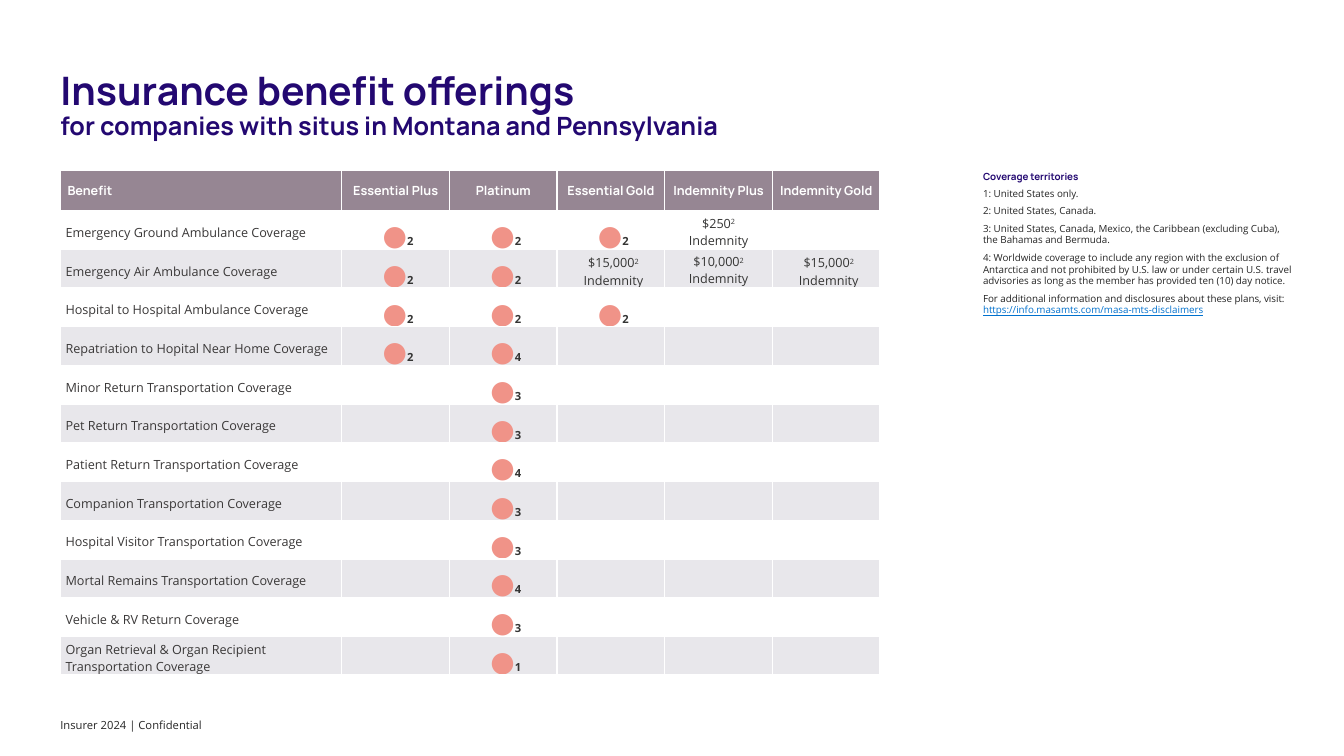
import pptx
import pptx.util
import pptx.dml.color
import pptx.enum.text

Inches = pptx.util.Inches
Pt = pptx.util.Pt
CENTER = pptx.enum.text.PP_ALIGN.CENTER
MIDDLE = pptx.enum.text.MSO_ANCHOR.MIDDLE

HEADING = "Manrope"
BODY = "Open Sans"
COLORS = {
    "navy": "230871", "text": "262626", "label": "3A3838", "mark": "343433",
    "dot": "F09388", "header": "968693", "band": "E8E7EB", "white": "FFFFFF",
    "info": "222222", "address": "0071CE",
}
PLANS = ["Essential Plus", "Platinum", "Essential Gold", "Indemnity Plus", "Indemnity Gold"]
# One entry per plan: a territory number, an indemnity amount, or "" for none.
BENEFITS = [
    ("Emergency Ground Ambulance Coverage", ["2", "2", "2", "$250", ""]),
    ("Emergency Air Ambulance Coverage", ["2", "2", "$15,000", "$10,000", "$15,000"]),
    ("Hospital to Hospital Ambulance Coverage", ["2", "2", "2", "", ""]),
    ("Repatriation to Hopital Near Home Coverage", ["2", "4", "", "", ""]),
    ("Minor Return Transportation Coverage", ["", "3", "", "", ""]),
    ("Pet Return Transportation Coverage", ["", "3", "", "", ""]),
    ("Patient Return Transportation Coverage", ["", "4", "", "", ""]),
    ("Companion Transportation Coverage", ["", "3", "", "", ""]),
    ("Hospital Visitor Transportation Coverage", ["", "3", "", "", ""]),
    ("Mortal Remains Transportation Coverage", ["", "4", "", "", ""]),
    ("Vehicle & RV Return Coverage", ["", "3", "", "", ""]),
    ("Organ Retrieval & Organ Recipient Transportation Coverage", ["", "1", "", "", ""]),
]
TERRITORIES = [
    "1: United States only.",
    "2: United States, Canada.",
    "3: United States, Canada, Mexico, the Caribbean (excluding Cuba), the Bahamas and Bermuda.",
    "4: Worldwide coverage to include any region with the exclusion of Antarctica and not "
    "prohibited by U.S. law or under certain U.S. travel advisories as long as the member "
    "has provided ten (10) day notice.",
]


def rgb(name):
    return pptx.dml.color.RGBColor.from_string(COLORS[name])


def add_span(para, text, size, color, font=BODY, bold=False):
    span = para.add_run()
    span.text = text
    span.font.size = Pt(size)
    span.font.name = font
    span.font.bold = bold
    span.font.color.rgb = rgb(color)
    return span


def set_margins(target, left, top, right, bottom):
    target.margin_left, target.margin_top = Inches(left), Inches(top)
    target.margin_right, target.margin_bottom = Inches(right), Inches(bottom)


def add_text_frame(page, left, top, width, height):
    box = page.shapes.add_textbox(Inches(left), Inches(top), Inches(width), Inches(height))
    frame = box.text_frame
    frame.word_wrap = True
    set_margins(frame, 0, 0, 0, 0)
    return frame


def add_title(page, left, top, width, height):
    para = add_text_frame(page, left, top, width, height).paragraphs[0]
    para.line_spacing = 0.9
    add_span(para, "Insurance benefit offerings", 28, "navy", HEADING, True)
    para.add_line_break()
    add_span(para, "for companies with situs in Montana and Pennsylvania", 18, "navy", HEADING, True)


def add_territories(page, left, top, width, height):
    frame = add_text_frame(page, left, top, width, height)
    add_span(frame.paragraphs[0], "Coverage territories", 7, "navy", HEADING, True)
    for territory in TERRITORIES:
        para = frame.add_paragraph()
        para.space_before = Pt(4)
        add_span(para, territory, 7, "text")
    para = frame.add_paragraph()
    para.space_before = Pt(4)
    add_span(para, "For additional information and disclosures about these plans, visit: ", 7, "info")
    address = add_span(para, "https://info.masamts.com/masa-mts-disclaimers", 7, "address")
    address.font.underline = True


def add_footer(page, left, top, width, height):
    frame = add_text_frame(page, left, top, width, height)
    set_margins(frame, 0.1, 0.05, 0.1, 0.05)
    add_span(frame.paragraphs[0], "Insurer 2024 | Confidential", 8, "text")


def fill_cell(cell, color):
    cell.fill.solid()
    cell.fill.fore_color.rgb = rgb(color)
    cell.vertical_anchor = MIDDLE
    set_margins(cell, 0.05, 0.05, 0, 0)


def write_offer(cell, offer):
    """Shows a dot with its territory number, or an indemnity amount."""
    para = cell.text_frame.paragraphs[0]
    para.alignment = CENTER
    if offer.startswith("$"):
        add_span(para, offer, 9, "mark")
        raised = add_span(para, "2", 9, "mark")
        raised.font._element.set("baseline", "30000")
        para = cell.text_frame.add_paragraph()
        para.alignment = CENTER
        add_span(para, "Indemnity", 9, "mark")
    elif offer:
        add_span(para, "●", 20, "dot")
        add_span(para, offer, 8, "mark", bold=True)
    else:
        set_margins(cell, 0, 0, 0, 0)


def add_benefit_table(page, left, top, width, height):
    label_width, header_height = 2.79, 0.4
    table = page.shapes.add_table(
        len(BENEFITS) + 1, len(PLANS) + 1,
        Inches(left), Inches(top), Inches(width), Inches(height)).table
    for column in table.columns:
        column.width = Inches((width - label_width) / len(PLANS))
    table.columns[0].width = Inches(label_width)
    for row in table.rows:
        row.height = Inches((height - header_height) / len(BENEFITS))
    table.rows[0].height = Inches(header_height)

    for index, heading in enumerate(["Benefit"] + PLANS):
        cell = table.cell(0, index)
        fill_cell(cell, "header")
        set_margins(cell, 0.07, 0.04, 0.07, 0.04)
        para = cell.text_frame.paragraphs[0]
        if index:
            para.alignment = CENTER
        add_span(para, heading, 9, "white", HEADING, True)

    for number, (benefit, offers) in enumerate(BENEFITS, 1):
        band = "white" if number % 2 else "band"
        label = table.cell(number, 0)
        fill_cell(label, band)
        add_span(label.text_frame.paragraphs[0], benefit, 9, "label")
        for index, offer in enumerate(offers, 1):
            cell = table.cell(number, index)
            fill_cell(cell, band)
            write_offer(cell, offer)
            if PLANS[index - 1] == "Indemnity Plus" and offer:
                set_margins(cell, 0.07, 0.04, 0.07, 0.04)


def main():
    deck = pptx.Presentation()
    deck.slide_width, deck.slide_height = Inches(13.33), Inches(7.5)
    page = deck.slides.add_slide(deck.slide_layouts[6])
    add_footer(page, 0.5, 7.08, 7.93, 0.24)
    add_title(page, 0.6, 0.71, 11.5, 0.97)
    add_territories(page, 9.75, 1.69, 3.09, 1.62)
    add_benefit_table(page, 0.6, 1.69, 8.13, 5)
    deck.save("out.pptx")


if __name__ == "__main__":
    main()
